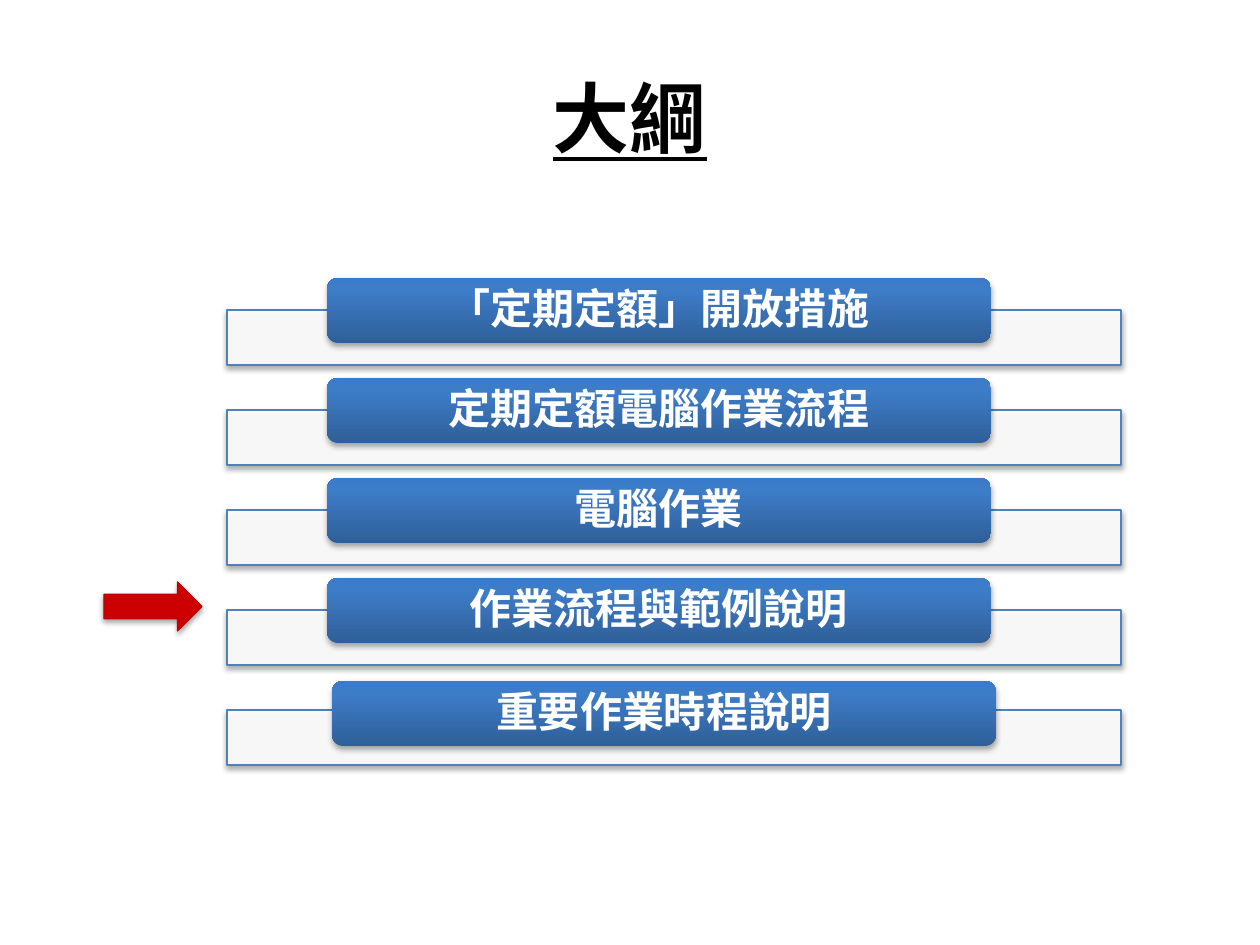
"""Builds the outline slide with five agenda entries and a marker on the current one."""
from lxml.etree import SubElement
from pptx import Presentation
from pptx.dml.color import RGBColor
from pptx.enum.shapes import MSO_SHAPE as Shape
from pptx.enum.text import MSO_ANCHOR as Anchor, PP_ALIGN as Align
from pptx.oxml import parse_xml
from pptx.oxml.ns import nsdecls, qn
from pptx.util import Pt

EMU_PER_INCH = 914400
PX_PER_INCH = 126
BLACK = RGBColor(0x00, 0x00, 0x00)
WHITE = RGBColor(0xFF, 0xFF, 0xFF)
BAR_LINE = RGBColor(0x4F, 0x81, 0xBD)
ARROW_FILL = RGBColor(0xCC, 0x00, 0x00)
ARROW_LINE = RGBColor(0xC0, 0x00, 0x00)
GRADIENT = [
    (0, RGBColor(0x2F, 0x5F, 0x99)),
    (80, RGBColor(0x3D, 0x7C, 0xC7)),
    (100, RGBColor(0x3A, 0x7C, 0xCB)),
]
SHADOW = (
    f'<a:outerShdw {nsdecls("a")} blurRad="40000" dist="23000" dir="5400000" rotWithShape="0">'
    '<a:srgbClr val="000000"><a:alpha val="35000"/></a:srgbClr></a:outerShdw>'
)

PITCH = 100
FIRST_BAR_TOP = 310
FIRST_PILL_TOP = 278
ENTRIES = [
    ("「定期定額」開放措施", "Times New Roman"),
    ("定期定額電腦作業流程", "Times New Roman"),
    ("電腦作業", "Times New Roman"),
    ("作業流程與範例說明", "Calibri"),
    ("重要作業時程說明", "Calibri"),
]


def px(*lengths):
    return [round(length * EMU_PER_INCH / PX_PER_INCH) for length in lengths]


def write(frame, text, *, font, size, color, underline=None, spacing=None):
    frame.word_wrap = True
    frame.vertical_anchor = Anchor.MIDDLE
    paragraph = frame.paragraphs[0]
    paragraph.alignment = Align.CENTER
    paragraph.line_spacing = spacing
    run = paragraph.add_run()
    run.text = text
    run.font.name = font
    run.font.size = Pt(size)
    run.font.bold = True
    run.font.underline = underline
    run.font.color.rgb = color


class OutlineSlide:
    """Holds the style and the current slide."""

    def __init__(self, slide):
        self.slide = slide

    def title(self, text, *box):
        heading = self.slide.shapes.title
        heading.left, heading.top, heading.width, heading.height = px(*box)
        write(heading.text_frame, text, font="Arial", size=44, color=BLACK, underline=True)

    def raised(self, kind, box, fill=None, line=None):
        shape = self.slide.shapes.add_shape(kind, *px(*box))
        if fill is not None:
            shape.fill.solid()
            shape.fill.fore_color.rgb = fill
        if line is None:
            shape.line.fill.background()
        else:
            shape.line.color.rgb = line
            shape.line.width = Pt(0.75)
        shape.shadow.inherit = False
        shape.element.spPr.find(qn("a:effectLst")).append(parse_xml(SHADOW))
        return shape

    def bar(self, *box):
        bar = self.raised(Shape.RECTANGLE, box, WHITE, BAR_LINE)
        tint = bar.element.spPr.find(qn("a:solidFill")).find(qn("a:srgbClr"))
        SubElement(tint, qn("a:alpha"), val="90000")

    def pill(self, text, font, *box):
        pill = self.raised(Shape.ROUNDED_RECTANGLE, box)
        pill.fill.gradient()
        pill.fill.gradient_angle = 90
        stops = pill.element.spPr.find(qn("a:gradFill")).find(qn("a:gsLst"))
        for old_stop in list(stops):
            stops.remove(old_stop)
        for percent, color in GRADIENT:
            stop = SubElement(stops, qn("a:gs"), pos=str(percent * 1000))
            SubElement(stop, qn("a:srgbClr"), val=str(color))
        frame = pill.text_frame
        frame.margin_left, frame.margin_top, frame.margin_right, frame.margin_bottom = px(24, 0, 24, 0)
        write(frame, text, font=font, size=24, color=WHITE, spacing=0.9)

    def arrow(self, *box):
        self.raised(Shape.RIGHT_ARROW, box, ARROW_FILL, ARROW_LINE)


def main():
    deck = Presentation()
    deck.slide_width, deck.slide_height = px(1260, 945)
    outline = OutlineSlide(deck.slides.add_slide(deck.slide_layouts[5]))
    outline.title("大綱", 63, 38, 1134, 157)
    for row, (entry, font) in enumerate(ENTRIES):
        offset = row * PITCH
        outline.bar(227, FIRST_BAR_TOP + offset, 894, 55)
        nudge_x, nudge_y = (5, 3) if row == len(ENTRIES) - 1 else (0, 0)
        outline.pill(entry, font, 327 + nudge_x, FIRST_PILL_TOP + offset + nudge_y, 664, 65)
    outline.arrow(104, 582, 98, 49)
    deck.save("out.pptx")


if __name__ == "__main__":
    main()
